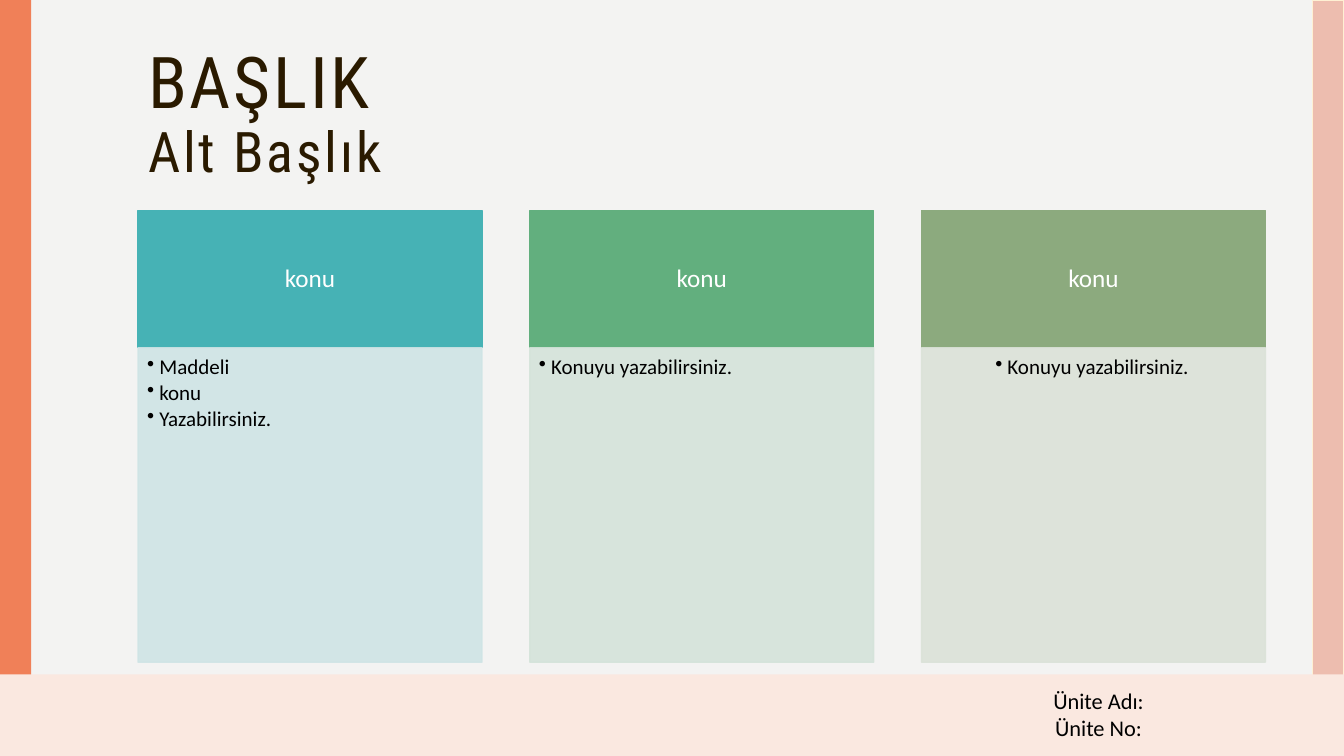
from dataclasses import dataclass

from lxml.etree import SubElement
from pptx import Presentation
from pptx.dml.color import RGBColor
from pptx.enum.shapes import MSO_SHAPE
from pptx.enum.text import MSO_ANCHOR, PP_ALIGN
from pptx.oxml.ns import qn
from pptx.util import Inches, Pt


@dataclass(frozen=True)
class Theme:
    paper: str = "F3F3F2"
    left_band: str = "F08058"
    right_band: str = "EDBDAF"
    right_edge: str = "FEF0D3"
    footer: str = "FAE8E0"
    title: str = "2A1A00"
    ink: str = "000000"
    white: str = "FFFFFF"
    title_font: str = "Roboto Condensed"
    text_font: str = "Calibri"
    title_size: int = 51
    subtitle_size: int = 40
    topic_size: int = 18
    footer_size: int = 16
    bullet_size: int = 15


@dataclass(frozen=True)
class Grid:
    width: float = 13.33
    height: float = 7.5
    band: float = 0.31
    left: float = 1.37
    right: float = 12.55
    columns: int = 3
    column: float = 3.41
    head_top: float = 2.09
    body_top: float = 3.45
    body_bottom: float = 6.57
    footer_top: float = 6.69

    def column_left(self, index):
        pitch = (self.right - self.left - self.column) / (self.columns - 1)
        return self.left + index * pitch


@dataclass(frozen=True)
class Topic:
    heading: str
    items: tuple
    head_fill: str
    body_fill: str
    align: PP_ALIGN = PP_ALIGN.LEFT


THEME = Theme()
GRID = Grid()
TOPICS = (
    Topic("konu", ("Maddeli", "konu", "Yazabilirsiniz."), "46B2B5", "CFE4E5"),
    Topic("konu", ("Konuyu yazabilirsiniz.",), "62AF7E", "D4E3DA"),
    Topic("konu", ("Konuyu yazabilirsiniz.",), "8CAA7E", "DBE2D8", PP_ALIGN.CENTER),
)


def paint(fill, color, opacity=100):
    fill.solid()
    fill.fore_color.rgb = RGBColor.from_string(color)
    if opacity < 100:
        color_node = fill._xPr.find(qn("a:solidFill"))[0]
        SubElement(color_node, qn("a:alpha"), val=str(opacity * 1000))


def add_panel(page, left, top, width, height, color, edge=None, opacity=100):
    panel = page.shapes.add_shape(
        MSO_SHAPE.RECTANGLE, Inches(left), Inches(top), Inches(width), Inches(height)
    )
    panel.shadow.inherit = False
    paint(panel.fill, color, opacity)
    if edge:
        panel.line.width = Pt(1)
        paint(panel.line.fill, edge, opacity)
    else:
        panel.line.fill.background()
    return panel


def add_text_box(page, left, top, width, height):
    return page.shapes.add_textbox(
        Inches(left), Inches(top), Inches(width), Inches(height)
    )


def set_frame(box, anchor=MSO_ANCHOR.TOP, insets=(0.1, 0.05, 0.1, 0.05)):
    frame = box.text_frame
    frame.word_wrap = True
    frame.vertical_anchor = anchor
    left, top, right, bottom = (Inches(inset) for inset in insets)
    frame.margin_left, frame.margin_top = left, top
    frame.margin_right, frame.margin_bottom = right, bottom
    return frame


def add_bullet(para, indent):
    para.level = 1
    properties = para._p.get_or_add_pPr()
    properties.set("marL", str(Inches(indent)))
    properties.set("indent", str(-Inches(indent)))
    SubElement(properties, qn("a:buChar"), char="•")


def add_span(para, text, *, size, color=THEME.ink, font=THEME.text_font, tracking=0):
    span = para.add_run()
    span.text = text
    span.font.size = Pt(size)
    span.font.name = font
    span.font.color.rgb = RGBColor.from_string(color)
    if tracking:
        span._r.get_or_add_rPr().set("spc", str(tracking * 100))


def write_lines(frame, lines, *, align=PP_ALIGN.LEFT, spacing=1.0, after=0,
                bullet_indent=0, **style):
    for index, line in enumerate(lines):
        para = frame.add_paragraph() if index else frame.paragraphs[0]
        if bullet_indent:
            add_bullet(para, bullet_indent)
        para.alignment = align
        para.line_spacing = spacing
        para.space_after = Pt(after)
        add_span(para, line, **style)


def add_bands(page):
    add_panel(page, 0, 0, GRID.band, GRID.height, THEME.left_band)
    add_panel(page, GRID.width - GRID.band, 0, GRID.band, GRID.height,
              THEME.right_band, THEME.right_edge)
    add_panel(page, 0, GRID.footer_top, GRID.width, GRID.height - GRID.footer_top,
              THEME.footer)


def add_footer(page, lines):
    box = add_text_box(page, 9.89, 6.77, 2.01, 0.64)
    write_lines(set_frame(box), lines, align=PP_ALIGN.CENTER, size=THEME.footer_size)


def add_topic(page, index, topic):
    left = GRID.column_left(index)
    head = add_panel(page, left, GRID.head_top, GRID.column,
                     GRID.body_top - GRID.head_top, topic.head_fill, topic.head_fill)
    write_lines(set_frame(head, MSO_ANCHOR.MIDDLE, (0.14, 0.08, 0.14, 0.08)),
                (topic.heading,), align=PP_ALIGN.CENTER, spacing=0.9,
                size=THEME.topic_size, color=THEME.white)
    body = add_panel(page, left, GRID.body_top, GRID.column,
                     GRID.body_bottom - GRID.body_top, topic.body_fill,
                     topic.body_fill, opacity=90)
    write_lines(set_frame(body, insets=(0.09, 0.09, 0.12, 0.13)), topic.items,
                align=topic.align, spacing=0.9, after=2, bullet_indent=0.12,
                size=THEME.bullet_size)


def add_title(page, title, subtitle):
    box = add_text_box(page, GRID.left, 0.42, 11.13, 1.63)
    para = set_frame(box).paragraphs[0]
    para.line_spacing = 0.9
    style = {"color": THEME.title, "font": THEME.title_font, "tracking": 2}
    add_span(para, title, size=THEME.title_size, **style)
    para.add_line_break()
    add_span(para, subtitle, size=THEME.subtitle_size, **style)


def main():
    deck = Presentation()
    deck.slide_width = Inches(GRID.width)
    deck.slide_height = Inches(GRID.height)
    page = deck.slides.add_slide(deck.slide_layouts[6])
    paint(page.background.fill, THEME.paper)
    add_bands(page)
    add_footer(page, ("Ünite Adı:", "Ünite No:"))
    for index, topic in enumerate(TOPICS):
        add_topic(page, index, topic)
    add_title(page, "BAŞLIK", "Alt Başlık")
    deck.save("out.pptx")


if __name__ == "__main__":
    main()
